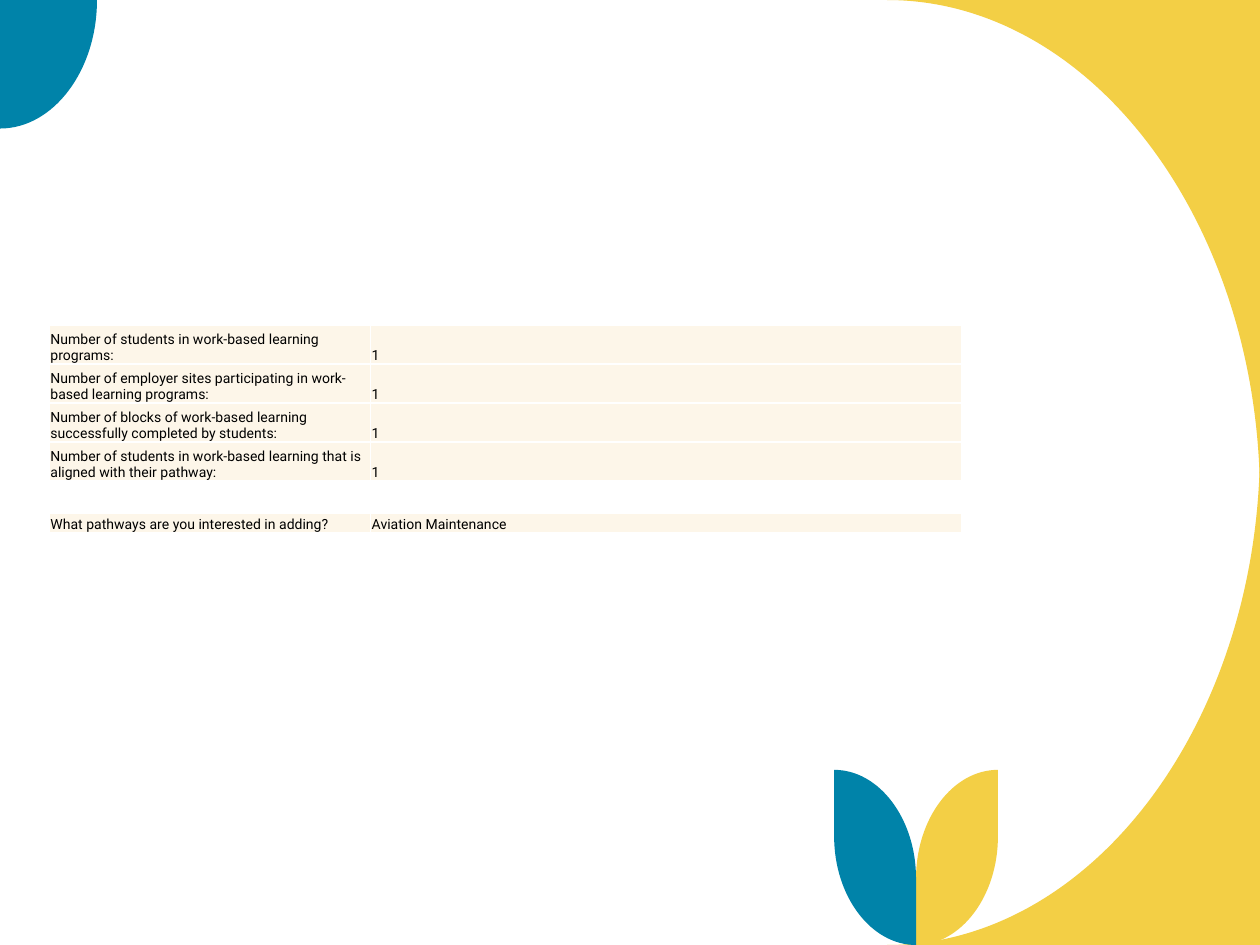
from lxml import etree
from pptx import Presentation
from pptx.dml.color import RGBColor
from pptx.enum import text
from pptx.oxml import ns
from pptx.util import Inches, Pt

YELLOW, BLUE, CREAM, WHITE, BLACK = "F3CF45", "0083A9", "FDF6E9", "FFFFFF", "000000"
SLIDE_W, SLIDE_H = 10, 7.5
ROUND = 0.55  # control point distance of a quarter ellipse, as a share of its radius
COLUMNS = (2.55, 4.69)
COUNTS = [
    ("Number of students in work-based learning programs:", "1"),
    ("Number of employer sites participating in work-based learning programs:", "1"),
    ("Number of blocks of work-based learning successfully completed by students:", "1"),
    ("Number of students in work-based learning that is aligned with their pathway:", "1"),
]
PATHWAYS = [("What pathways are you interested in adding?", "Aviation Maintenance")]
CELL_FORMAT = {
    "margin_left": Inches(0.01),
    "margin_right": Inches(0.01),
    "margin_top": Inches(0.01),
    "margin_bottom": 0,
    "vertical_anchor": text.MSO_ANCHOR.BOTTOM,
}
FONT_FORMAT = {"name": "Roboto", "size": Pt(8), "bold": False}


def rgb(value):
    return RGBColor.from_string(value)


def quarter(start, bulge, end):
    """Curve segment from start to end that rounds off the corner at bulge."""
    controls = [tuple(a + ROUND * (b - a) for a, b in zip(tip, bulge))
                for tip in (start, end)]
    return controls + [end]


def add_outline(shapes, start, segments, color):
    """Closed outline; a segment of one point is a line, one of three a curve."""
    builder = shapes.build_freeform(Inches(start[0]), Inches(start[1]))
    points = [point for segment in segments for point in segment]
    builder.add_line_segments([(Inches(x), Inches(y)) for x, y in points])
    sp = builder.convert_to_shape()
    lines = iter(list(sp._element.iter(ns.qn("a:lnTo"))))
    for segment in segments:
        parts = [next(lines) for _ in segment]
        if len(parts) == 3:
            curve = etree.Element(ns.qn("a:cubicBezTo"))
            parts[0].addprevious(curve)
            for part in parts:
                curve.append(part[0])
                part.getparent().remove(part)
    path = next(sp._element.iter(ns.qn("a:path")))
    etree.SubElement(path, ns.qn("a:close"))
    sp.shadow.inherit = False
    sp.fill.solid()
    sp.fill.fore_color.rgb = rgb(color)
    sp.line.fill.background()


def add_corners(shapes):
    w, h = 2.96, 3.95
    for edge, inward in ((0, h), (SLIDE_H, -h)):
        start, corner = (SLIDE_W - w, edge), (SLIDE_W, edge)
        end = (SLIDE_W, edge + inward)
        add_outline(shapes, start, [quarter(start, corner, end), [corner]], YELLOW)
    start, end = (0.77, 0), (0, 1.02)
    add_outline(shapes, start, [quarter(start, (0.77, 1.02), end), [(0, 0)]], BLUE)


def add_leaf(shapes, x, y, w, h, color):
    """Leaf growing from its foot at x; a negative width makes it lean left."""
    bend = 0.62 * h
    tip, foot = (x + w, y), (x, y + h)
    outer, inner = (x + w, y + h - bend), (x, y + bend)
    segments = [
        [outer], quarter(outer, (x + w, y + h), foot),
        [inner], quarter(inner, (x, y), tip),
    ]
    add_outline(shapes, tip, segments, color)


def add_borders(cell, color, width):
    tc_pr = cell._tc.get_or_add_tcPr()
    for i, side in enumerate("LRTB"):
        ln = etree.Element(ns.qn(f"a:ln{side}"), w=str(Pt(width)))
        fill = etree.SubElement(ln, ns.qn("a:solidFill"))
        etree.SubElement(fill, ns.qn("a:srgbClr"), val=color)
        tc_pr.insert(i, ln)


def fill_cell(cell, words):
    for name, value in CELL_FORMAT.items():
        setattr(cell, name, value)
    cell.fill.solid()
    cell.fill.fore_color.rgb = rgb(CREAM)
    add_borders(cell, WHITE, 1)
    r = cell.text_frame.paragraphs[0].add_run()
    r.text = words
    for name, value in FONT_FORMAT.items():
        setattr(r.font, name, value)
    r.font.color.rgb = rgb(BLACK)


def add_answers(shapes, x, y, row_h, rows):
    frame = shapes.add_table(
        len(rows), len(COLUMNS), Inches(x), Inches(y),
        Inches(sum(COLUMNS)), Inches(row_h * len(rows)))
    table = frame.table
    table.first_row = table.horz_banding = False
    for column, width in zip(table.columns, COLUMNS):
        column.width = Inches(width)
    for row, answers in zip(table.rows, rows):
        row.height = Inches(row_h)
        for cell, words in zip(row.cells, answers):
            fill_cell(cell, words)


def main():
    prs = Presentation()
    prs.slide_width, prs.slide_height = Inches(SLIDE_W), Inches(SLIDE_H)
    shapes = prs.slides.add_slide(prs.slide_layouts[6]).shapes
    add_corners(shapes)
    leaves = shapes.add_group_shape().shapes
    for width, color in ((0.65, YELLOW), (-0.65, BLUE)):
        add_leaf(leaves, 7.27, 6.11, width, 1.39, color)
    add_answers(shapes, 0.39, 2.58, 0.31, COUNTS)
    add_answers(shapes, 0.39, 4.07, 0.16, PATHWAYS)
    prs.save("out.pptx")


if __name__ == "__main__":
    main()
